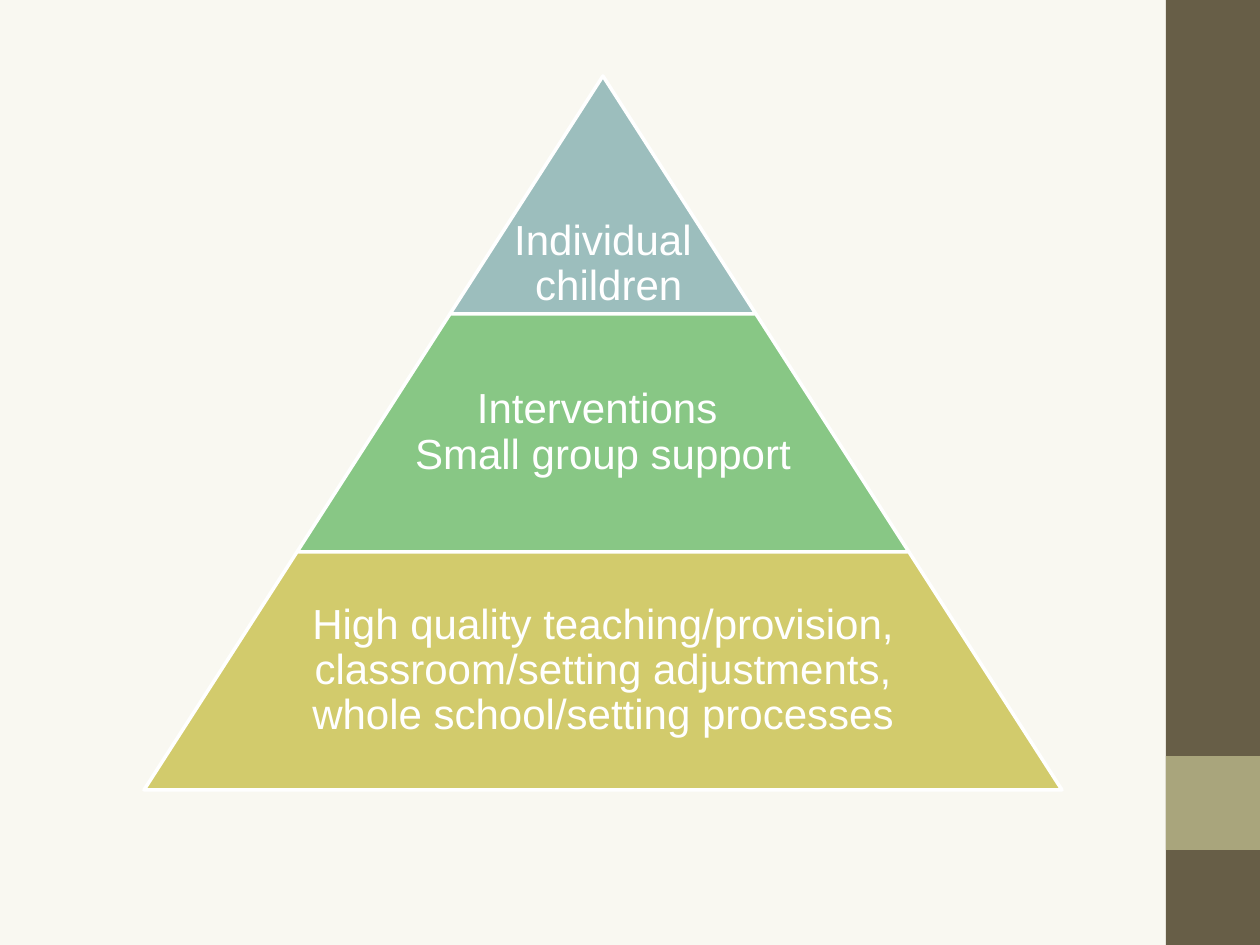
"""Build a slide with a three-tier support pyramid and a side band."""
from pptx import Presentation
from pptx.dml.color import RGBColor
from pptx.enum.shapes import MSO_SHAPE
from pptx.enum.text import MSO_ANCHOR, PP_ALIGN
from pptx.util import Pt

PX = 914400 // 126
WHITE = "FFFFFF"
BANDS = [(0, 945, "675E47"), (756, 94, "A9A57C")]
TIERS = [
    ("9CBEBD", 1, MSO_ANCHOR.BOTTOM, ["Individual", " children"]),
    ("88C785", 0.65, MSO_ANCHOR.MIDDLE, ["Interventions ", "Small group support"]),
    ("D2CB6C", 0.65, MSO_ANCHOR.MIDDLE,
     ["High quality teaching/provision, classroom/setting adjustments, "
      "whole school/setting processes"]),
]
MID, TOP, STEP, HIGH = 603, 76, 306, 238


def paint(fill, color):
    fill.solid()
    fill.fore_color.rgb = RGBColor.from_string(color)


def place(left, top, width, height):
    return [round(n * PX) for n in (left, top, width, height)]


def draw(slide, kind, box, color):
    shape = slide.shapes.add_shape(kind, *place(*box))
    shape.shadow.inherit = False
    paint(shape.fill, color)
    shape.line.fill.background()
    return shape


def write(slide, box, anchor, lines):
    frame = slide.shapes.add_textbox(*place(*box)).text_frame
    frame.word_wrap = True
    frame.vertical_anchor = anchor
    frame.margin_left = frame.margin_right = 4 * PX
    frame.margin_top = frame.margin_bottom = 4 * PX
    para = frame.paragraphs[0]
    para.alignment = PP_ALIGN.CENTER
    para.line_spacing = 0.9
    for i, line in enumerate(lines):
        if i:
            para.add_line_break()
        run = para.add_run()
        run.text = line
        run.font.name = "Arial"
        run.font.size = Pt(24)
        run.font.color.rgb = RGBColor.from_string(WHITE)


def main():
    deck = Presentation()
    deck.slide_width, deck.slide_height = 1260 * PX, 945 * PX
    slide = deck.slides.add_slide(deck.slide_layouts[6])
    paint(slide.background.fill, "F9F8F1")
    for top, height, color in BANDS:
        draw(slide, MSO_SHAPE.RECTANGLE, (1166, top, 94, height), color)
    for i, (color, share, anchor, lines) in enumerate(TIERS):
        top, width = TOP + i * HIGH, (i + 1) * STEP
        box = (MID - width / 2, top, width, HIGH)
        tier = draw(slide, MSO_SHAPE.TRAPEZOID, box, color)
        tier.adjustments[0] = STEP / 2 / HIGH
        paint(tier.line.fill, WHITE)
        tier.line.width = Pt(2)
        wide = width * share
        write(slide, (MID - wide / 2, top, wide, HIGH), anchor, lines)
    deck.save("out.pptx")


if __name__ == "__main__":
    main()
